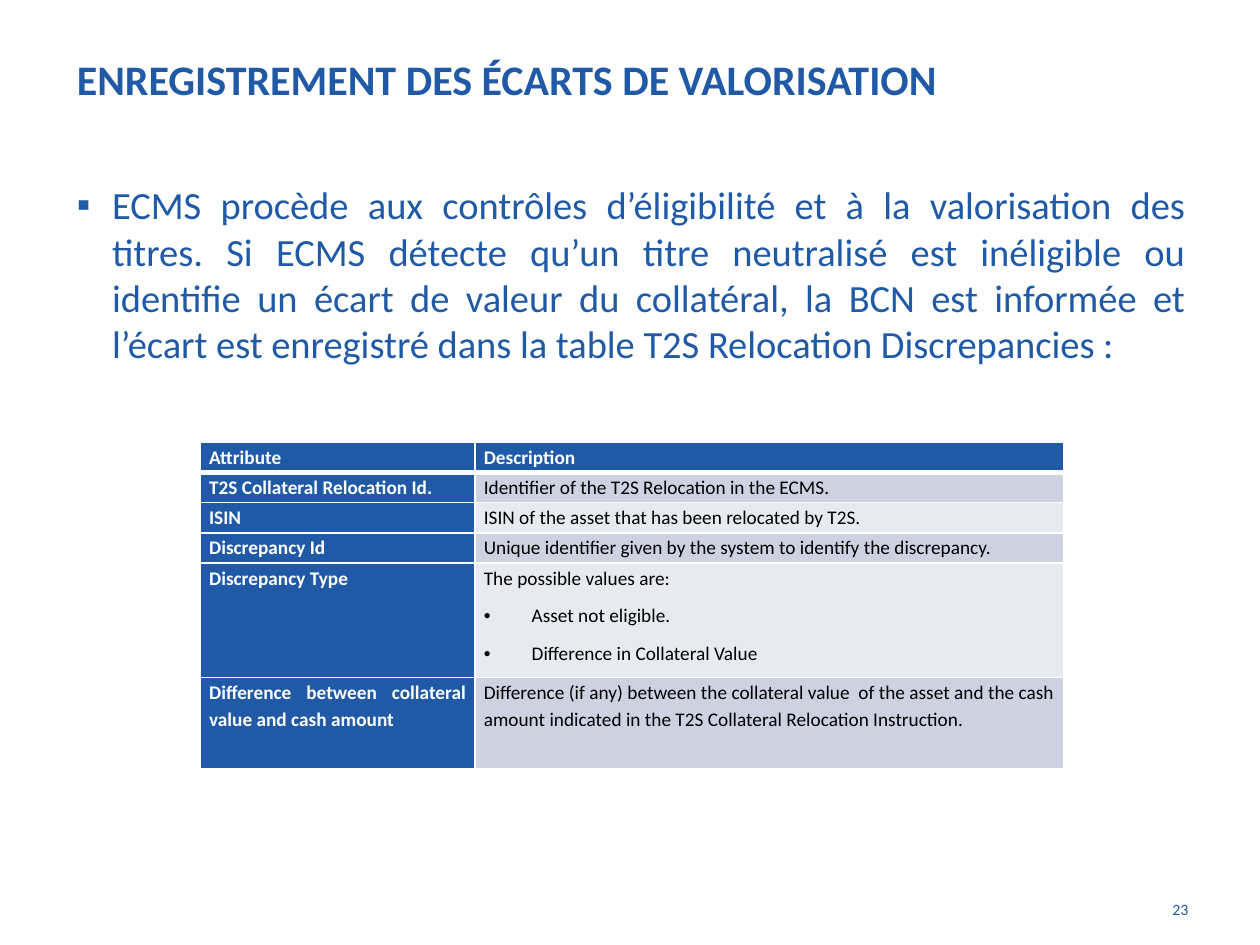
from dataclasses import dataclass

from lxml import etree
from pptx import Presentation, util as u
from pptx.dml.color import RGBColor
from pptx.enum import text
from pptx.oxml import ns

COLORS = {"blue": "205AA7", "white": "FFFFFF", "black": "000000",
          "band_dark": "CDD2E1", "band_light": "E8EAF1"}
FONT = "Calibri"
WIDTH, HEIGHT = u.Inches(10), u.Inches(7.5)
ALIGN = text.PP_ALIGN


@dataclass
class Area:
    """Percentages of the slide's width and height."""
    left: float
    top: float
    width: float
    height: float

    def box(self) -> tuple:
        return (across(self.left), down(self.top),
                across(self.width), down(self.height))


@dataclass
class Attribute:
    name: str
    description: str
    height: float = 3.2
    values: tuple = ()


TITLE_AREA = Area(5.1, 0, 90, 16.67)
BODY_AREA = Area(5.1, 18.53, 90, 66)
NUMBER_AREA = Area(89.4, 94.53, 5.9, 5.2)
TABLE_AREA = Area(15.9, 46.8, 68.5, 34.67)
COLUMN_WIDTHS = (21.8, 46.7)

ATTRIBUTES = [
    Attribute("Attribute", "Description"),
    Attribute("T2S Collateral Relocation Id.",
              "Identifier of the T2S Relocation in the ECMS."),
    Attribute("ISIN", "ISIN of the asset that has been relocated by T2S."),
    Attribute("Discrepancy Id",
              "Unique identifier given by the system to identify the discrepancy."),
    Attribute("Discrepancy Type", "The possible values are:", 12.13,
              ("Asset not eligible.", "Difference in Collateral Value")),
    Attribute("Difference between collateral value and cash amount",
              "Difference (if any) between the collateral value  of the asset and the "
              "cash amount indicated in the T2S Collateral Relocation Instruction.", 9.6),
]


def across(percent: float) -> int:
    return round(WIDTH * percent / 100)


def down(percent: float) -> int:
    return round(HEIGHT * percent / 100)


def add_bullet(paragraph, character: str, indent: float) -> None:
    properties = paragraph._p.get_or_add_pPr()
    properties.set("marL", str(u.Inches(indent)))
    properties.set("indent", str(-u.Inches(indent)))
    etree.SubElement(properties, ns.qn("a:buFont"), typeface="Arial")
    etree.SubElement(properties, ns.qn("a:buChar"), char=character)


def format_paragraph(paragraph, size: float, color: str, bold: bool = False,
                     align=ALIGN.LEFT) -> None:
    paragraph.alignment = align
    for run in paragraph.runs:
        run.font.name, run.font.size, run.font.bold = FONT, u.Pt(size), bold
        run.font.color.rgb = RGBColor.from_string(COLORS[color])


def fill_frame(shape, area: Area, content: str, anchor=text.MSO_ANCHOR.TOP):
    shape.left, shape.top, shape.width, shape.height = area.box()
    frame = shape.text_frame
    frame.text = content
    frame.word_wrap = True
    frame.auto_size = text.MSO_AUTO_SIZE.NONE
    frame.vertical_anchor = anchor
    return frame.paragraphs[0]


def add_borders(cell, top: float, bottom: float) -> None:
    properties = cell._tc.get_or_add_tcPr()
    widths = {"lnL": 1, "lnR": 1, "lnT": top, "lnB": bottom}
    for position, (side, width) in enumerate(widths.items()):
        line = etree.Element(ns.qn(f"a:{side}"), w=str(u.Pt(width)))
        fill = etree.SubElement(line, ns.qn("a:solidFill"))
        etree.SubElement(fill, ns.qn("a:srgbClr"), val=COLORS["white"])
        properties.insert(position, line)


def fill_cell(cell, lines: tuple, fill: str, color: str, bold: bool, align) -> None:
    cell.fill.solid()
    cell.fill.fore_color.rgb = RGBColor.from_string(COLORS[fill])
    cell.margin_left = cell.margin_right = u.Inches(0.07)
    cell.margin_top = cell.margin_bottom = 0
    cell.text_frame.text = "\n".join(lines)
    for index, paragraph in enumerate(cell.text_frame.paragraphs):
        if index:
            add_bullet(paragraph, "•", 0.38)
        paragraph.line_spacing = 1.15
        paragraph.space_before = u.Pt(3 if index else 0)
        paragraph.space_after = u.Pt(3)
        format_paragraph(paragraph, 11, color, bold, align)


def add_attribute_table(slide) -> None:
    table = slide.shapes.add_table(len(ATTRIBUTES), len(COLUMN_WIDTHS),
                                   *TABLE_AREA.box()).table
    for column, width in zip(table.columns, COLUMN_WIDTHS):
        column.width = across(width)
    for index, attribute in enumerate(ATTRIBUTES):
        table.rows[index].height = down(attribute.height)
        header = index == 0
        align = ALIGN.LEFT if header else ALIGN.JUSTIFY
        band = "band_dark" if index % 2 else "band_light"
        name, description = table.cell(index, 0), table.cell(index, 1)
        fill_cell(name, (attribute.name,), "blue", "white", True, align)
        fill_cell(description, (attribute.description, *attribute.values),
                  "blue" if header else band,
                  "white" if header else "black", header, align)
        for cell in (name, description):
            add_borders(cell, 3 if index == 1 else 1, 3 if header else 1)


def main() -> None:
    presentation = Presentation()
    presentation.slide_width, presentation.slide_height = WIDTH, HEIGHT
    slide = presentation.slides.add_slide(presentation.slide_layouts[1])

    title = fill_frame(slide.shapes.title, TITLE_AREA,
                       "ENREGISTREMENT DES ÉCARTS DE VALORISATION",
                       text.MSO_ANCHOR.MIDDLE)
    format_paragraph(title, 24, "blue", True)

    number = fill_frame(slide.shapes.add_textbox(*NUMBER_AREA.box()), NUMBER_AREA, "23")
    format_paragraph(number, 9, "blue", align=ALIGN.RIGHT)

    body = fill_frame(
        slide.placeholders[1], BODY_AREA,
        "ECMS procède aux contrôles d’éligibilité et à la valorisation des titres. "
        "Si ECMS détecte qu’un titre neutralisé est inéligible ou identifie un écart "
        "de valeur du collatéral, la BCN est informée et l’écart est enregistré dans "
        "la table T2S Relocation Discrepancies :")
    add_bullet(body, "▪", 0.28)
    body.space_before = u.Pt(0)
    format_paragraph(body, 22, "blue", align=ALIGN.JUSTIFY)

    add_attribute_table(slide)
    presentation.save("out.pptx")


if __name__ == "__main__":
    main()
